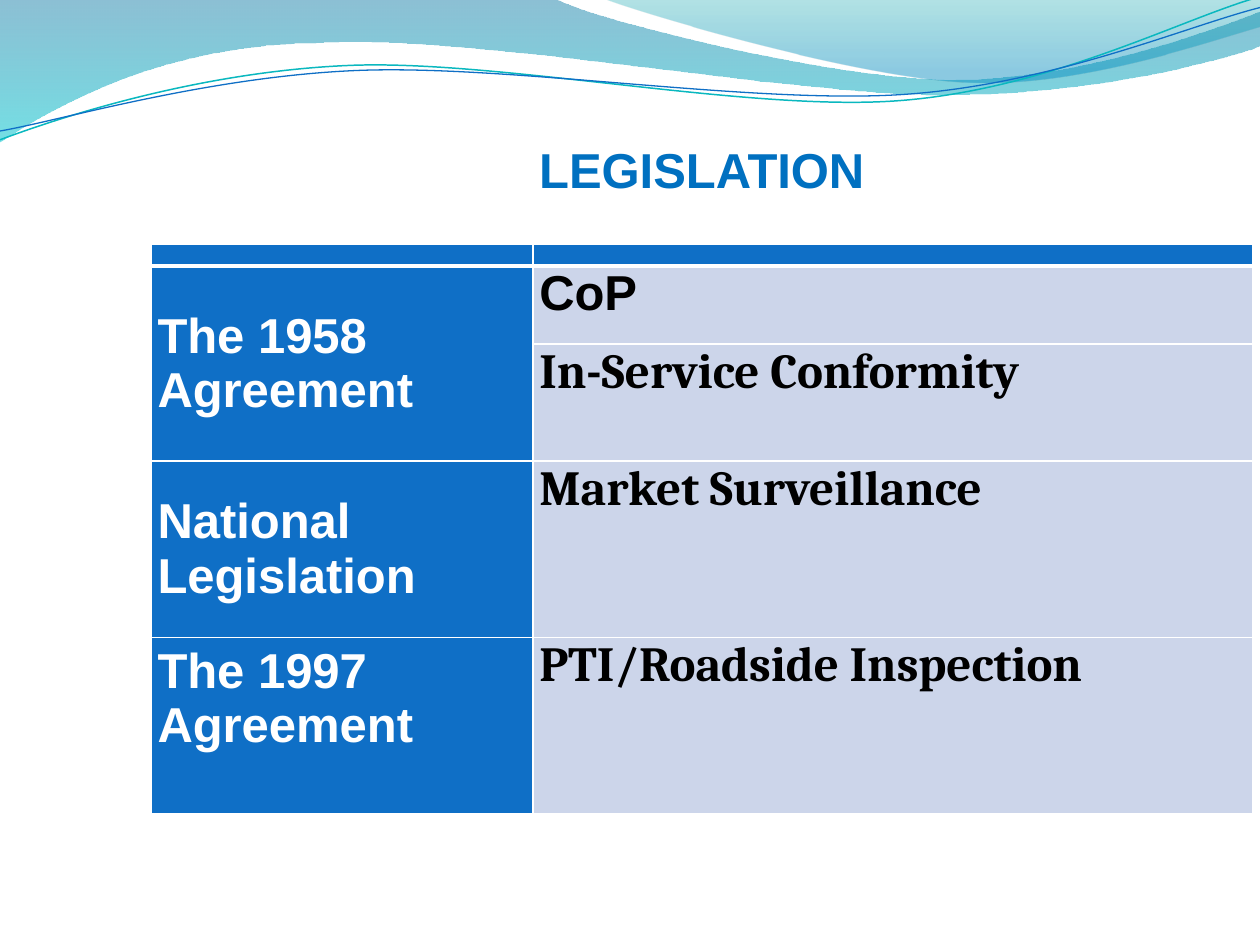
"""Build the LEGISLATION slide: wave banner, title and a two-column table."""
from lxml import etree
from pptx import Presentation
from pptx.dml.color import RGBColor
from pptx.enum.text import MSO_ANCHOR, MSO_AUTO_SIZE, PP_ALIGN
from pptx.oxml.ns import qn
from pptx.util import Inches, Pt

TOP, MIDDLE = MSO_ANCHOR.TOP, MSO_ANCHOR.MIDDLE
CENTER, LEFT = PP_ALIGN.CENTER, PP_ALIGN.LEFT
NO_FIT = MSO_AUTO_SIZE.NONE
TITLE_ONLY = 5
WIDTH, HEIGHT = 10, 7.5
BLUE, PALE, WHITE, BLACK = "0F6FC6", "CCD5EA", "FFFFFF", "000000"
TEXT_SIZE = 28

TITLE = "LEGISLATION"
AGREEMENTS = [(1, "The 1958 Agreement", 0), (3, "National Legislation", 0),
              (4, "The 1997 Agreement", 0.43)]
MEASURES = [("CoP", "Arial"), ("In-Service Conformity", "Cambria"),
            ("Market Surveillance", "Cambria"), ("PTI/Roadside Inspection", "Cambria")]
TABLE_LEFT, TABLE_TOP = 0.12 * WIDTH, 1.94
COLUMN_WIDTHS = [3.03, 5.71]
ROW_HEIGHTS = [0.17, 0.62, 0.93, 1.4, 1.4]

# Each path is a start point followed by lines (2 numbers) or curves (6 numbers).
BANDS = [
    ([(0, -0.01), (4.4, -0.01), (4.76, 0.17, 6.64, 0.63, 7.58, 0.63),
      (8.53, 0.63, 9.58, 0.26, 10, 0.09), (10.01, 0.36),
      (9.83, 0.44, 8.7, 0.76, 7.46, 0.75), (6.22, 0.75, 3.82, 0.28, 2.57, 0.34),
      (1.29, 0.35, 0.46, 0.83, -0.01, 1.13)],
     [(0, "0074A1", 45), (1, "00C6CF", 55)]),
    ([(4.79, -0.01), (5.09, 0.11, 6.82, 0.62, 7.69, 0.65),
      (8.56, 0.69, 9.61, 0.32, 10, 0.21), (10, 0)],
     [(0, "00A1A9", 30), (0.8, "008BBF", 45)]),
]
STRANDS = [
    ([(0, 1.11), (0.48, 0.93, 1.58, 0.57, 2.77, 0.52),
      (3.95, 0.47, 5.93, 0.89, 7.13, 0.8), (8.33, 0.71, 9.38, 0.15, 9.98, -0.02)],
     "0AB8BF", 0.85),
    ([(0, 1.04), (0.47, 0.96, 1.64, 0.61, 2.83, 0.56),
      (4.03, 0.51, 5.97, 0.83, 7.17, 0.75), (8.36, 0.67, 9.41, 0.21, 10, 0.06)],
     BLUE, 0.75),
]


def color(value):
    return RGBColor.from_string(value)


def add_outline(page, path, close):
    points = [(Inches(x), Inches(y)) for segment in path
              for x, y in zip(segment[::2], segment[1::2])]
    builder = page.shapes.build_freeform(*points[0], scale=1.0)
    builder.add_line_segments(points[1:], close=close)
    shape = builder.convert_to_shape()
    shape.shadow.inherit = False
    lines = iter(list(shape._element.iter(qn("a:lnTo"))))
    for segment in path[1:]:
        first = next(lines)
        if len(segment) == 6:
            curve = etree.Element(qn("a:cubicBezTo"))
            first.addprevious(curve)
            for line in (first, next(lines), next(lines)):
                curve.append(line[0])
                line.getparent().remove(line)
    return shape


def add_band(page, path, stops):
    band = add_outline(page, path, True)
    band.line.fill.background()
    band.fill.gradient()
    band.fill.gradient_angle = 270
    for stop, (position, value, opacity) in zip(band.fill.gradient_stops, stops):
        stop.position = position
        stop.color.rgb = color(value)
    tints = band._element.spPr.iter(qn("a:srgbClr"))
    for tint, (position, value, opacity) in zip(tints, stops):
        etree.SubElement(tint, qn("a:alpha"), val=str(opacity * 1000))


def add_strand(page, path, value, weight):
    strand = add_outline(page, path, False)
    strand.fill.background()
    strand.line.color.rgb = color(value)
    strand.line.width = Pt(weight)


def write(para, text, face, value, align):
    para.alignment = align
    span = para.add_run()
    span.text = text
    span.font.name, span.font.size, span.font.bold = face, Pt(TEXT_SIZE), True
    span.font.color.rgb = color(value)


def add_title(page):
    box = page.shapes.title
    box.left, box.top = Inches(1.14), Inches(0.6)
    box.width, box.height = Inches(8.86), Inches(1.25)
    frame = box.text_frame
    frame.auto_size, frame.vertical_anchor, frame.word_wrap = NO_FIT, TOP, True
    frame.margin_top = Inches(0.51)
    write(frame.paragraphs[0], TITLE, "Arial", "0070C0", CENTER)


def style_cell(cell, fill, bottom_weight):
    cell.margin_left = cell.margin_right = Inches(0.05)
    cell.margin_top = cell.margin_bottom = 0
    cell.fill.solid()
    cell.fill.fore_color.rgb = color(fill)
    properties = cell._tc.get_or_add_tcPr()
    for place, side in enumerate("LRTB"):
        weight = bottom_weight if side == "B" else 1
        border = etree.Element(qn("a:ln" + side), w=str(Pt(weight)))
        paint = etree.SubElement(border, qn("a:solidFill"))
        etree.SubElement(paint, qn("a:srgbClr"), val=WHITE)
        properties.insert(place, border)


def add_table(page):
    frame = page.shapes.add_table(
        len(ROW_HEIGHTS), len(COLUMN_WIDTHS), Inches(TABLE_LEFT), Inches(TABLE_TOP),
        Inches(sum(COLUMN_WIDTHS)), Inches(sum(ROW_HEIGHTS)))
    table = frame.table
    table.horz_banding = table.first_row = False
    for column, width in zip(table.columns, COLUMN_WIDTHS):
        column.width = Inches(width)
    for index, (row, height) in enumerate(zip(table.rows, ROW_HEIGHTS)):
        row.height = Inches(height)
        for cell, fill in zip(row.cells, (BLUE, PALE if index else BLUE)):
            style_cell(cell, fill, 1 if index else 3)
            if index == 0:
                para = cell.text_frame.paragraphs[0]
                etree.SubElement(para._p, qn("a:endParaRPr"), sz="800")
    table.cell(1, 0).merge(table.cell(2, 0))
    for index, text, bottom in AGREEMENTS:
        cell = table.cell(index, 0)
        cell.vertical_anchor, cell.margin_bottom = MIDDLE, Inches(bottom)
        write(cell.text_frame.paragraphs[0], text, "Arial", WHITE, LEFT)
    for index, (text, face) in enumerate(MEASURES, 1):
        cell = table.cell(index, 1)
        cell.vertical_anchor = TOP
        write(cell.text_frame.paragraphs[0], text, face, BLACK, LEFT)


def main():
    deck = Presentation()
    deck.slide_width, deck.slide_height = Inches(WIDTH), Inches(HEIGHT)
    page = deck.slides.add_slide(deck.slide_layouts[TITLE_ONLY])
    for band in BANDS:
        add_band(page, *band)
    for strand in STRANDS:
        add_strand(page, *strand)
    add_title(page)
    add_table(page)
    deck.save("out.pptx")


if __name__ == "__main__":
    main()
